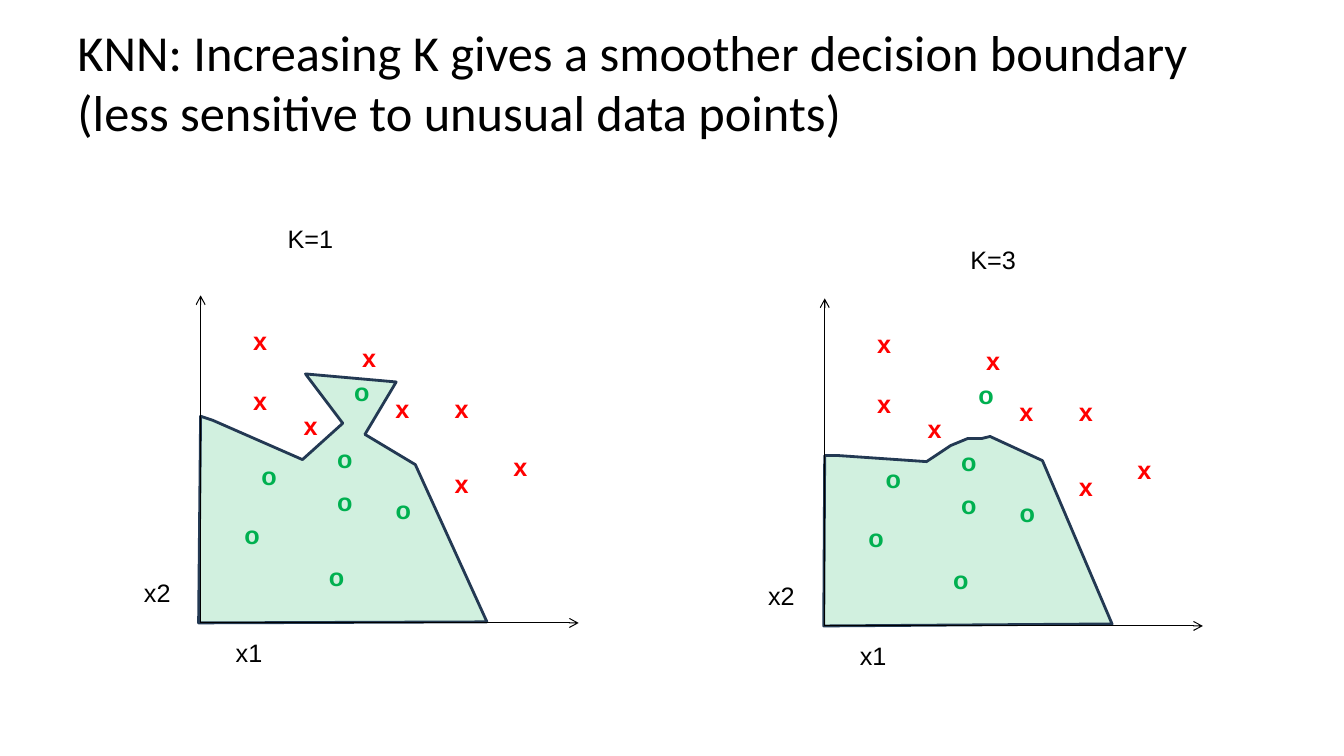
from dataclasses import dataclass

from lxml import etree
from pptx import Presentation
from pptx.dml.color import RGBColor
from pptx.enum.shapes import MSO_CONNECTOR
from pptx.enum.text import MSO_ANCHOR, MSO_AUTO_SIZE, PP_ALIGN
from pptx.oxml.ns import qn
from pptx.util import Inches, Pt

STRAIGHT = MSO_CONNECTOR.STRAIGHT
MIDDLE = MSO_ANCHOR.MIDDLE
FIT, NO_FIT = MSO_AUTO_SIZE.SHAPE_TO_FIT_TEXT, MSO_AUTO_SIZE.NONE
LEFT, CENTER = PP_ALIGN.LEFT, PP_ALIGN.CENTER


@dataclass(frozen=True)
class Theme:
    ink: str = "000000"
    cross: str = "FF0000"
    circle: str = "00B050"
    outline: str = "233953"
    region_alpha: int = 18
    title_font: str = "Calibri"
    body_font: str = "Arial"
    title_size: int = 36
    body_size: int = 18
    axis_width: float = 0.75
    outline_width: float = 2


THEME = Theme()

# Plot data: inches right of and above the origin
AXIS_LENGTHS = [(0, 3.25), (3.75, 0)]
CROSSES = [(2, 2.13), (2.59, 2.13), (2.59, 1.38), (3.17, 1.55),
           (0.59, 2.8), (0.59, 2.21), (1.67, 2.63), (1.09, 1.96)]
CIRCLES = [(1.6, 2.3), (2.01, 1.13), (0.51, 0.88), (0.68, 1.46),
           (1.35, 0.46), (1.43, 1.21), (1.43, 1.63)]
AXIS_NAMES = [("x2", (-0.43, 0.3)), ("x1", (0.48, -0.29))]
PLOTS = [
    {"origin": (1.99, 6.18), "caption": "K=1", "caption_at": (1.09, 3.81),
     "boundary": [(0, 2.05), (0.12, 2.01), (1.01, 1.62), (1.41, 1.98),
                  (1.04, 2.47), (1.94, 2.39), (1.63, 1.87), (2.13, 1.57),
                  (2.84, 0.01), (-0.02, 0)]},
    {"origin": (8.18, 6.21), "caption": "K=3", "caption_at": (1.67, 3.64),
     "boundary": [(0, 1.69), (0.14, 1.69), (1.01, 1.63), (1.25, 1.79),
                  (1.42, 1.86), (1.56, 1.86), (1.64, 1.88), (2.16, 1.64),
                  (2.85, 0.02), (-0.01, 0)]},
]


def add_text(shapes, box, text, font, align=CENTER, wrap=False, fit=FIT):
    tb = shapes.add_textbox(*map(Inches, box))
    tf = tb.text_frame
    frame = {"word_wrap": wrap, "auto_size": fit, "vertical_anchor": MIDDLE}
    for name, value in frame.items():
        setattr(tf, name, value)
    p = tf.paragraphs[0]
    p.alignment = align
    r = p.add_run()
    r.text = text
    color = font["color"]
    for name in ("name", "size", "bold"):
        setattr(r.font, name, font[name])
    r.font.color.rgb = RGBColor.from_string(color)


def add_label(shapes, at, text, color=THEME.ink, bold=False, width=0.47):
    """Place a one-line label centred on a point."""
    height = 0.4
    font = {"name": THEME.body_font, "size": Pt(THEME.body_size),
            "bold": bold, "color": color}
    box = (at[0] - width / 2, at[1] - height / 2, width, height)
    add_text(shapes, box, text, font)


def add_axis(shapes, start, end):
    line = shapes.add_connector(STRAIGHT, *map(Inches, start + end))
    line.line.color.rgb = RGBColor.from_string(THEME.ink)
    line.line.width = Pt(THEME.axis_width)
    etree.SubElement(line.line._get_or_add_ln(), qn("a:tailEnd"), type="arrow")
    etree.SubElement(line._element.spPr, qn("a:effectLst"))


def add_region(shapes, points):
    start, *rest = [(Inches(x), Inches(y)) for x, y in points]
    builder = shapes.build_freeform(*start)
    builder.add_line_segments(rest, close=True)
    sp = builder.convert_to_shape()
    sp.shadow.inherit = False
    sp.fill.solid()
    sp.fill.fore_color.rgb = RGBColor.from_string(THEME.circle)
    color = sp._element.spPr.find(qn("a:solidFill"))[0]
    etree.SubElement(color, qn("a:alpha"), val=str(THEME.region_alpha * 1000))
    sp.line.color.rgb = RGBColor.from_string(THEME.outline)
    sp.line.width = Pt(THEME.outline_width)


def add_title(s, box):
    font = {"name": THEME.title_font, "size": Pt(THEME.title_size),
            "bold": False, "color": THEME.ink}
    text = ("KNN: Increasing K gives a smoother decision boundary "
            "(less sensitive to unusual data points)")
    add_text(s.shapes, box, text, font, align=LEFT, wrap=True, fit=NO_FIT)


def add_plot(s, origin, caption, caption_at, boundary):
    def place(point):
        return origin[0] + point[0], origin[1] - point[1]

    # Decision region
    add_region(s.shapes, [place(point) for point in boundary])

    # Data points, axes and axis names
    group = s.shapes.add_group_shape().shapes
    for mark, color, width, points in (("x", THEME.cross, 0.34, CROSSES),
                                       ("o", THEME.circle, 0.36, CIRCLES)):
        for point in points:
            add_label(group, place(point), mark, color, True, width)
    for end in AXIS_LENGTHS:
        add_axis(group, origin, place(end))
    for name, point in AXIS_NAMES:
        add_label(group, place(point), name)

    # Caption
    add_label(s.shapes, place(caption_at), caption, width=0.66)


def main():
    prs = Presentation()
    prs.slide_width, prs.slide_height = Inches(13.33), Inches(7.5)
    s = prs.slides.add_slide(prs.slide_layouts[6])
    add_title(s, (0.67, 0.31, 12, 1))
    for plot in PLOTS:
        add_plot(s, **plot)
    prs.save("out.pptx")


if __name__ == "__main__":
    main()
